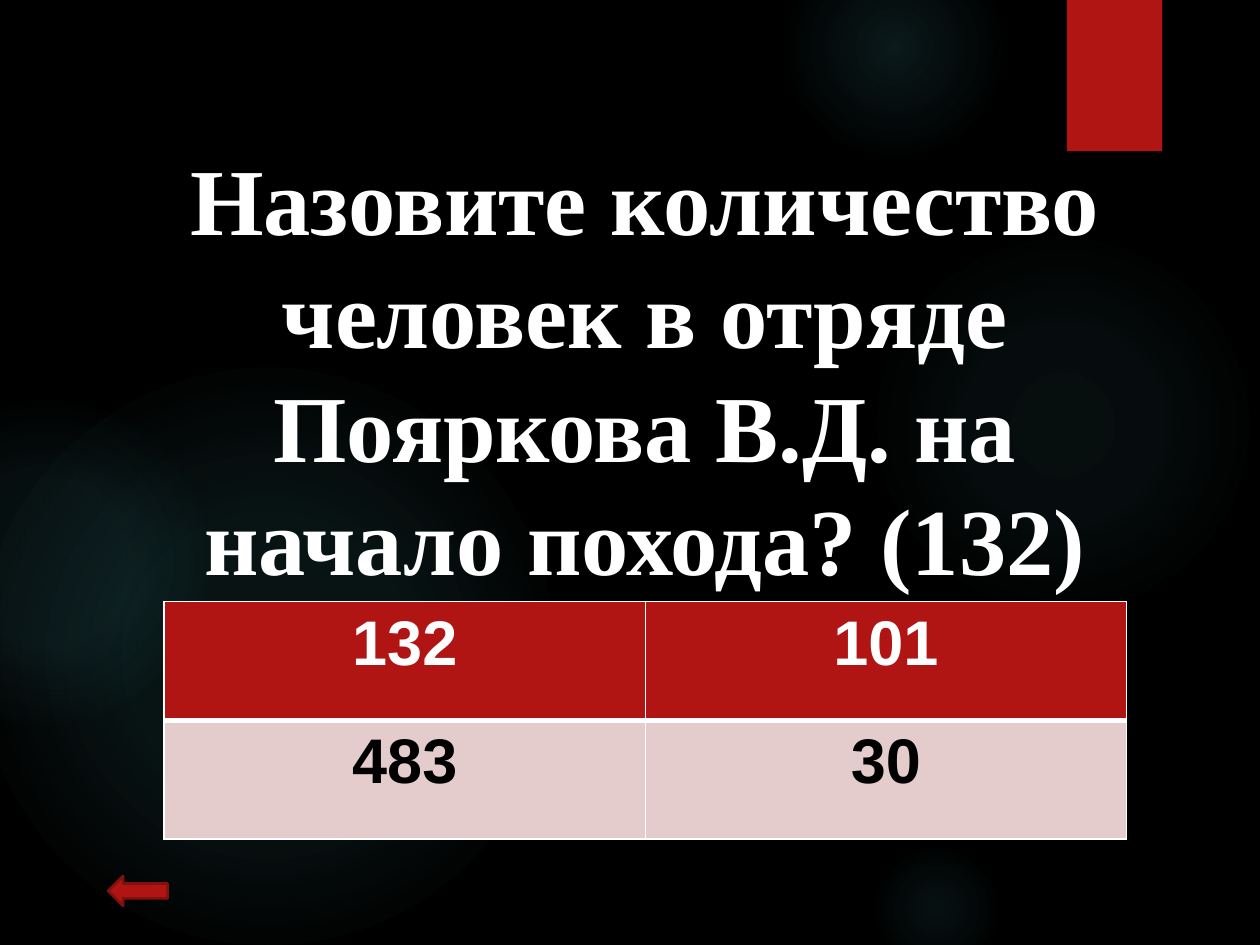
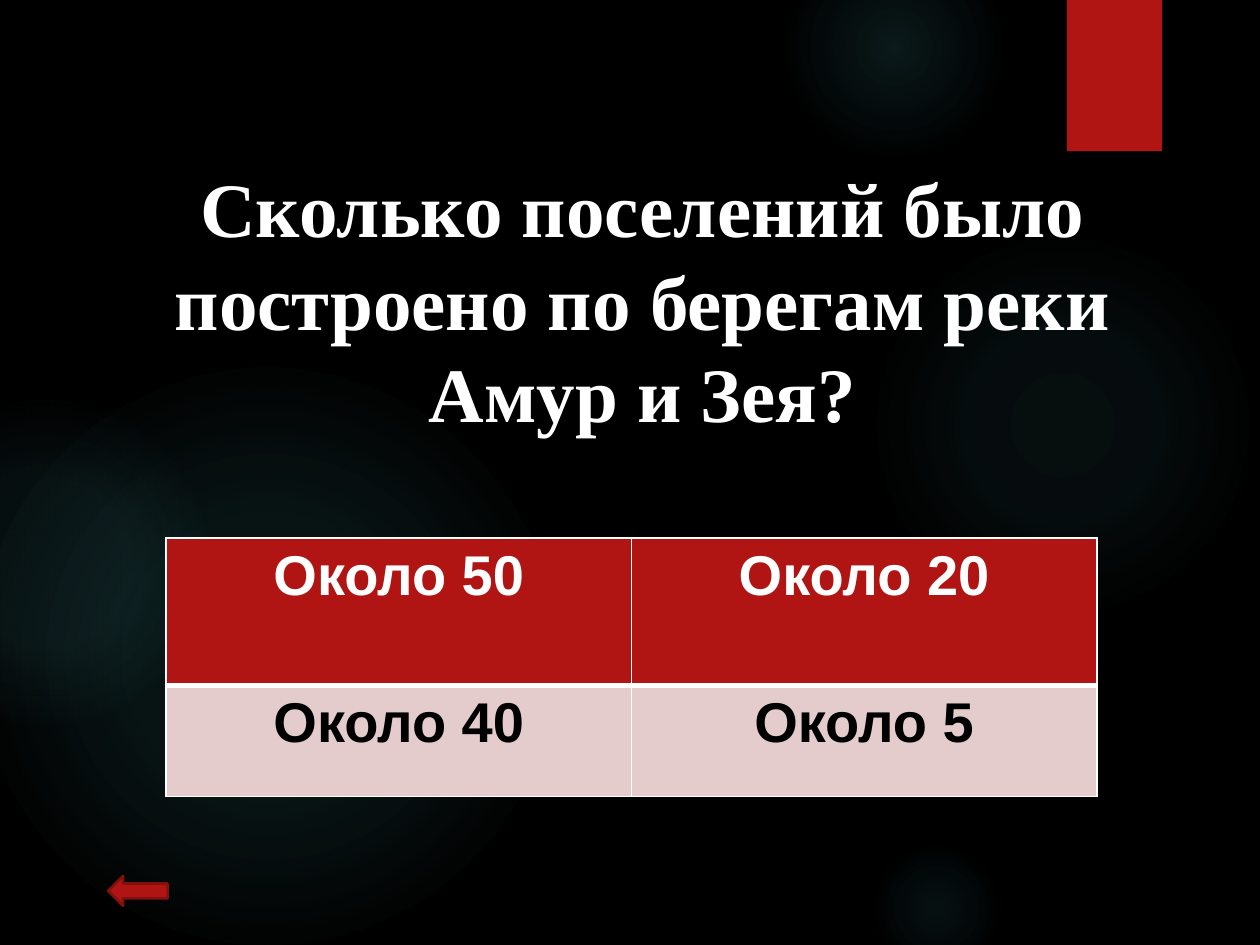
from lxml.etree import SubElement
from pptx import Presentation
from pptx.dml.color import RGBColor
from pptx.enum.shapes import MSO_SHAPE
from pptx.enum.text import MSO_ANCHOR, PP_ALIGN
from pptx.oxml import parse_xml
from pptx.oxml.ns import nsdecls, qn
from pptx.util import Cm, Pt

HUES = {
    "back": "000000",
    "glow": "50B9C1",
    "red": "B01513",
    "edge": "82100E",
    "pale": "E4CCCC",
    "white": "FFFFFF",
    "black": "000000",
}

GLOWS = [
    (17.5, 4.65, 7.82, [(0, 7), (36, 6), (69, 0)]),
    (15.8, -1.27, 4.45, [(0, 14), (36, 7), (73, 0)]),
    (17.5, 16.94, 2.74, [(0, 9), (36, 5), (66, 0)]),
    (-0.43, 7.42, 11.63, [(0, 11), (36, 10), (75, 0)]),
    (-2.34, 8.05, 6.55, [(0, 8), (36, 8), (72, 0)]),
]

QUIZ = [
    {
        "ask": "Назовите количество человек в отряде Пояркова В.Д. на начало похода? (132)",
        "box": (2.18, 2.72, 21.64, 11.79),
        "size": 54,
        "grid": [["132", "101"], ["483", "30"]],
        "spot": (3.31, 12.13),
        "wide": 9.7,
        "rows": (2.39, 2.39),
        "font": 36,
    },
    {
        "ask": "Сколько поселений было построено по берегам реки Амур и Зея?",
        "box": (2.16, 3.12, 21.59, 7.09),
        "size": 44,
        "grid": [["Около 50", "Около 20"], ["Около 40", "Около 5"]],
        "spot": (3.35, 10.85),
        "wide": 9.38,
        "rows": (2.97, 2.24),
        "font": 32,
    },
]


def hue(name):
    return RGBColor.from_string(HUES[name])


def paint(fill, name):
    fill.solid()
    fill.fore_color.rgb = hue(name)


def add_form(slide, kind, box):
    shape = slide.shapes.add_shape(kind, *map(Cm, box))
    shape.shadow.inherit = False
    shape.line.fill.background()
    return shape


def add_glow(slide, left, top, size, stops):
    shape = add_form(slide, MSO_SHAPE.OVAL, (left, top, size, size))
    marks = "".join(
        f'<a:gs pos="{pos * 1000}"><a:srgbClr val="{HUES["glow"]}">'
        f'<a:alpha val="{alpha * 1000}"/></a:srgbClr></a:gs>'
        for pos, alpha in stops
    )
    fill = parse_xml(
        f'<a:gradFill {nsdecls("a")} rotWithShape="1"><a:gsLst>{marks}</a:gsLst>'
        '<a:path path="circle"><a:fillToRect l="50000" t="50000" r="50000" b="50000"/>'
        "</a:path></a:gradFill>"
    )
    shape.element.spPr.find(qn("a:prstGeom")).addnext(fill)


def add_base(slide):
    paint(slide.background.fill, "back")
    for glow in GLOWS:
        add_glow(slide, *glow)
    band = add_form(slide, MSO_SHAPE.RECTANGLE, (21.51, 0, 1.92, 3.05))
    paint(band.fill, "red")
    arrow = add_form(slide, MSO_SHAPE.LEFT_ARROW, (2.18, 17.66, 1.2, 0.6))
    paint(arrow.fill, "red")
    paint(arrow.line.fill, "edge")
    arrow.line.width = Pt(1.5)


def set_text(frame, text, face, size, name):
    frame.text = text
    para = frame.paragraphs[0]
    para.alignment = PP_ALIGN.CENTER
    font = para.runs[0].font
    font.name, font.size, font.bold = face, Pt(size), True
    font.color.rgb = hue(name)


def add_ask(slide, text, box, size):
    frame = slide.shapes.add_textbox(*map(Cm, box)).text_frame
    frame.word_wrap = True
    frame.vertical_anchor = MSO_ANCHOR.TOP
    set_text(frame, text, "Times New Roman", size, "white")


def add_edges(cell, widths):
    props = cell._tc.get_or_add_tcPr()
    for spot, (side, width) in enumerate(widths.items()):
        line = SubElement(props, qn(f"a:ln{side}"), w=str(Pt(width)))
        fill = SubElement(line, qn("a:solidFill"))
        SubElement(fill, qn("a:srgbClr"), val=HUES["white"])
        props.insert(spot, line)


def add_grid(slide, grid, spot, wide, rows, size):
    frame = slide.shapes.add_table(
        len(grid), len(grid[0]), *map(Cm, spot), Cm(wide * len(grid[0])), Cm(sum(rows))
    )
    table = frame.table
    table.first_row = table.horz_banding = False
    for col in table.columns:
        col.width = Cm(wide)
    for y, texts in enumerate(grid):
        table.rows[y].height = Cm(rows[y])
        head = y == 0
        for x, text in enumerate(texts):
            cell = table.cell(y, x)
            set_text(cell.text_frame, text, "Arial", size, "white" if head else "black")
            paint(cell.fill, "red" if head else "pale")
            add_edges(cell, {"L": 1, "R": 1, "T": 1 if head else 3, "B": 3 if head else 1})


def main():
    deck = Presentation()
    deck.slide_width, deck.slide_height = Cm(25.4), Cm(19.05)
    for item in QUIZ:
        slide = deck.slides.add_slide(deck.slide_layouts[6])
        add_base(slide)
        add_ask(slide, item["ask"], item["box"], item["size"])
        add_grid(slide, item["grid"], item["spot"], item["wide"], item["rows"], item["font"])
    deck.save("out.pptx")


if __name__ == "__main__":
    main()
